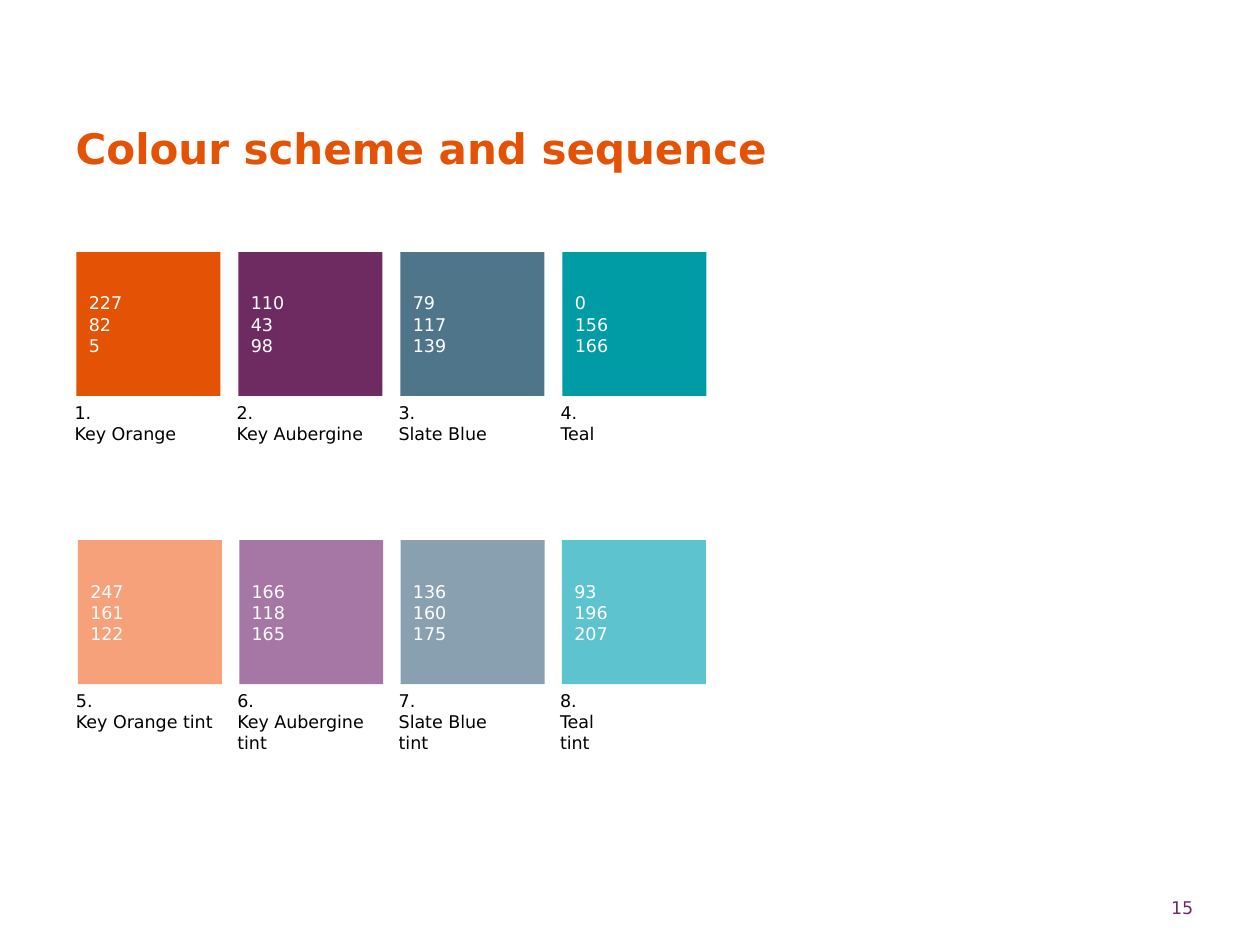
from pptx import Presentation
from pptx.dml.color import RGBColor
from pptx.enum.shapes import MSO_SHAPE
from pptx.enum.text import MSO_ANCHOR, MSO_AUTO_SIZE, PP_ALIGN
from pptx.util import Pt

RECTANGLE = MSO_SHAPE.RECTANGLE
MIDDLE = MSO_ANCHOR.MIDDLE
TOP = MSO_ANCHOR.TOP
GROW = MSO_AUTO_SIZE.SHAPE_TO_FIT_TEXT
LEFT = PP_ALIGN.LEFT
RIGHT = PP_ALIGN.RIGHT

FONT = "DejaVu Sans"
ORANGE = "E35205"
AUBERGINE = "6E2B62"
WHITE = "FFFFFF"
BLACK = "000000"

SWATCH_SIDE = 82.29
LABEL_WIDTH = 87.8

MAIN_COLOURS = [
    ((227, 82, 5), "1.\vKey Orange"),
    ((110, 43, 98), "2.\nKey Aubergine"),
    ((79, 117, 139), "3.\nSlate Blue"),
    ((0, 156, 166), "4.\nTeal"),
]
TINTS = [
    ((247, 161, 122), "5.\nKey Orange tint"),
    ((166, 118, 165), "6.\nKey Aubergine\ntint"),
    ((136, 160, 175), "7.\vSlate Blue\vtint"),
    ((93, 196, 207), "8.\vTeal\ntint"),
]


def colour(code):
    return RGBColor.from_string(code)


def write(shape, text, size, ink, insets, anchor=TOP, align=LEFT, bold=False):
    frame = shape.text_frame
    frame.word_wrap = True
    frame.vertical_anchor = anchor
    (frame.margin_left, frame.margin_top,
     frame.margin_right, frame.margin_bottom) = map(Pt, insets)
    frame.text = text
    for paragraph in frame.paragraphs:
        paragraph.alignment = align
        paragraph.font.name = FONT
        paragraph.font.size = Pt(size)
        paragraph.font.bold = bold
        paragraph.font.color.rgb = colour(ink)
    return frame


def add_text(slide, box, *args, **options):
    return write(slide.shapes.add_textbox(*map(Pt, box)), *args, **options)


def add_title(slide, box):
    frame = add_text(slide, box, "Colour scheme and sequence", 24, ORANGE,
                     (0, 0, 0, 0), bold=True)
    frame.paragraphs[0].line_spacing = Pt(30)


def add_swatch(slide, box, channels, label, label_height):
    left, top, width, height = box
    square = slide.shapes.add_shape(RECTANGLE, *map(Pt, box))
    square.shadow.inherit = False
    square.fill.solid()
    square.fill.fore_color.rgb = RGBColor(*channels)
    square.line.fill.background()
    write(square, "\n".join(map(str, channels)), 10, WHITE,
          (7.2, 3.6, 7.2, 3.6), anchor=MIDDLE)
    label_box = (left - 1.1, top + height, LABEL_WIDTH, label_height)
    caption = add_text(slide, label_box, label, 10, BLACK, (0, 3.6, 7.2, 3.6))
    caption.auto_size = GROW


def add_swatch_row(slide, box, swatches, label_height):
    left, top, width, height = box
    pitch = (width - SWATCH_SIDE) / (len(swatches) - 1)
    for column, (channels, label) in enumerate(swatches):
        square_box = (left + column * pitch, top, SWATCH_SIDE, height)
        add_swatch(slide, square_box, channels, label, label_height)


def add_page_number(slide, box):
    add_text(slide, box, "15", 10, AUBERGINE, (0, 0, 0, 0), align=RIGHT)


def main():
    deck = Presentation()
    deck.slide_width = Pt(720)
    deck.slide_height = Pt(540)
    slide = deck.slides.add_slide(deck.slide_layouts[6])
    add_title(slide, (43.2, 68.8, 639.4, 36))
    add_page_number(slide, (642.2, 512.6, 39.6, 16.6))
    add_swatch_row(slide, (43.7, 144, 360, SWATCH_SIDE), MAIN_COLOURS, 34.6)
    add_swatch_row(slide, (44.5, 308.6, 358.9, SWATCH_SIDE), TINTS, 48.2)
    deck.save("out.pptx")


if __name__ == "__main__":
    main()
